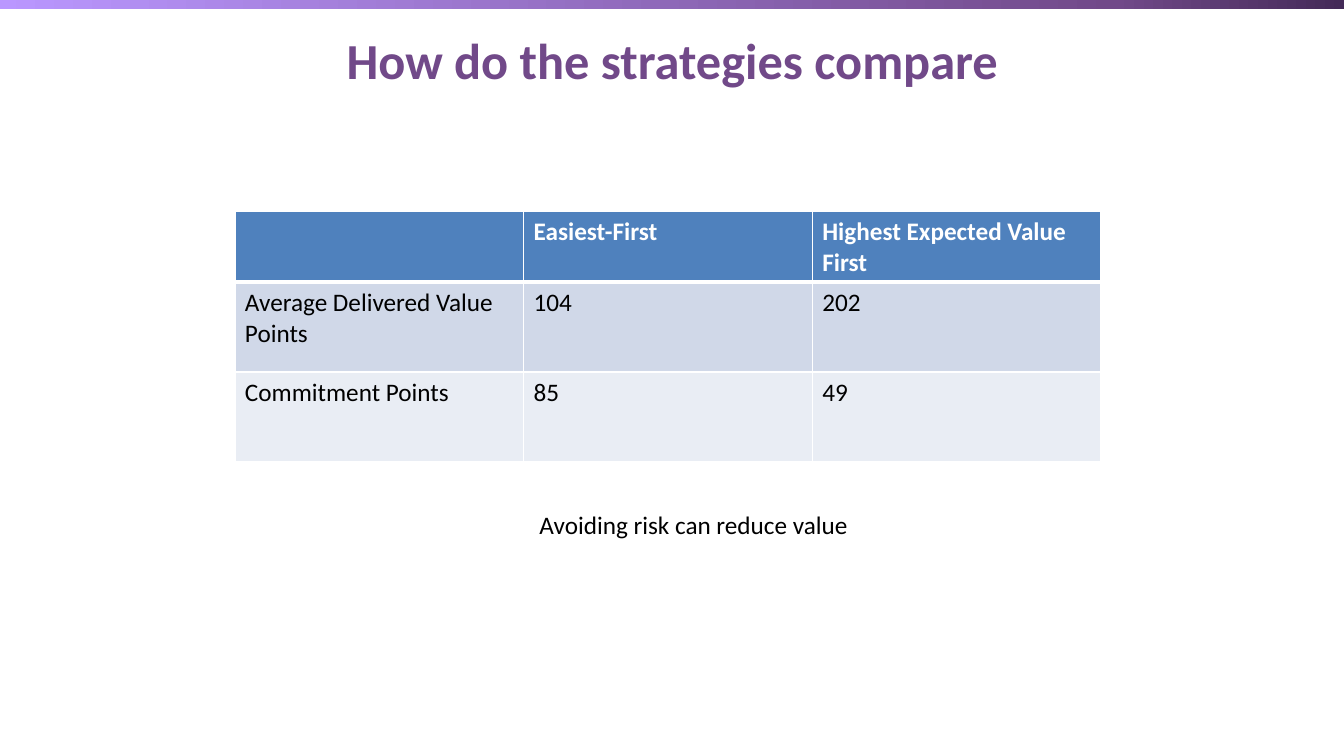
import copy
from dataclasses import dataclass

import pptx
import pptx.dml.color
import pptx.enum.shapes
import pptx.enum.text
import pptx.oxml
import pptx.oxml.ns
import pptx.util

Inches = pptx.util.Inches
Pt = pptx.util.Pt
Align = pptx.enum.text.PP_ALIGN
Anchor = pptx.enum.text.MSO_ANCHOR


@dataclass(frozen=True)
class Theme:
    font: str = "Calibri"
    title_size: int = 36
    body_size: int = 18
    purple: str = "714989"
    black: str = "000000"
    white: str = "FFFFFF"
    header: str = "4F81BD"
    bands: tuple = ("D0D8E8", "E9EDF4")
    bar_stops: tuple = ((0, "442A58"), (0.17, "714989"), (1, "BA97FF"))
    thin_line: int = 1
    header_line: int = 3


THEME = Theme()

STRATEGY_ROWS = [
    ["", "Easiest-First", "Highest Expected Value First"],
    ["Average Delivered Value Points", "104", "202"],
    ["Commitment Points", "85", "49"],
]


def rgb(value):
    return pptx.dml.color.RGBColor.from_string(value)


def write_text(frame, text, size=THEME.body_size, color=THEME.black,
               bold=False, align=Align.LEFT):
    para = frame.paragraphs[0]
    para.alignment = align
    para.font.size = Pt(size)
    span = para.add_run()
    span.text = text
    span.font.name = THEME.font
    span.font.size = Pt(size)
    span.font.bold = bold
    span.font.color.rgb = rgb(color)


def add_top_bar(page, box):
    bar = page.shapes.add_shape(
        pptx.enum.shapes.MSO_SHAPE.RECTANGLE, *map(Inches, box))
    bar.shadow.inherit = False
    bar.line.fill.background()
    bar.fill.gradient()
    bar.fill.gradient_angle = 180
    # A new gradient has two stops; add the middle one
    stop_list = bar.fill._fill._gradFill.gsLst
    stop_list.insert(1, copy.deepcopy(stop_list[0]))
    for stop, (position, color) in zip(bar.fill.gradient_stops, THEME.bar_stops):
        stop.position = position
        stop.color.rgb = rgb(color)


def add_label(page, box, text, wrap=True, anchor=Anchor.TOP, **style):
    label = page.shapes.add_textbox(*map(Inches, box))
    label.text_frame.word_wrap = wrap
    label.text_frame.vertical_anchor = anchor
    write_text(label.text_frame, text, align=Align.CENTER, **style)


def set_borders(cell, top, bottom):
    widths = {"L": THEME.thin_line, "R": THEME.thin_line, "T": top, "B": bottom}
    properties = cell._tc.get_or_add_tcPr()
    for index, (side, width) in enumerate(widths.items()):
        border = pptx.oxml.parse_xml(
            f'<a:ln{side} {pptx.oxml.ns.nsdecls("a")} w="{Pt(width)}">'
            f'<a:solidFill><a:srgbClr val="{THEME.white}"/></a:solidFill>'
            f'</a:ln{side}>')
        properties.insert(index, border)


def add_strategy_table(page, box, rows, header_height):
    left, top, width, height = box
    table = page.shapes.add_table(
        len(rows), len(rows[0]), *map(Inches, box)).table
    for column in table.columns:
        column.width = Inches(width / len(rows[0]))
    body_height = (height - header_height) / (len(rows) - 1)
    for index, texts in enumerate(rows):
        is_header = index == 0
        table.rows[index].height = Inches(
            header_height if is_header else body_height)
        fill = THEME.header if is_header else THEME.bands[(index - 1) % 2]
        for cell, text in zip(table.rows[index].cells, texts):
            cell.fill.solid()
            cell.fill.fore_color.rgb = rgb(fill)
            set_borders(
                cell,
                top=THEME.header_line if index == 1 else THEME.thin_line,
                bottom=THEME.header_line if is_header else THEME.thin_line)
            if text:
                write_text(cell.text_frame, text, bold=is_header,
                           color=THEME.white if is_header else THEME.black)


def build_comparison(page):
    # Bar and title
    add_top_bar(page, (-0.03, -0.02, 13.36, 0.11))
    add_label(page, (0.37, 0.08, 12.6, 1.02), "How do the strategies compare",
              anchor=Anchor.MIDDLE, size=THEME.title_size,
              color=THEME.purple, bold=True)
    # Table and conclusion
    add_strategy_table(page, (2.33, 2.1, 8.59, 2.48), STRATEGY_ROWS, 0.7)
    add_label(page, (5.23, 5, 3.3, 0.4), "Avoiding risk can reduce value",
              wrap=False)


def main():
    deck = pptx.Presentation()
    deck.slide_width = Inches(13.33)
    deck.slide_height = Inches(7.5)
    build_comparison(deck.slides.add_slide(deck.slide_layouts[6]))
    deck.save("out.pptx")


if __name__ == "__main__":
    main()
